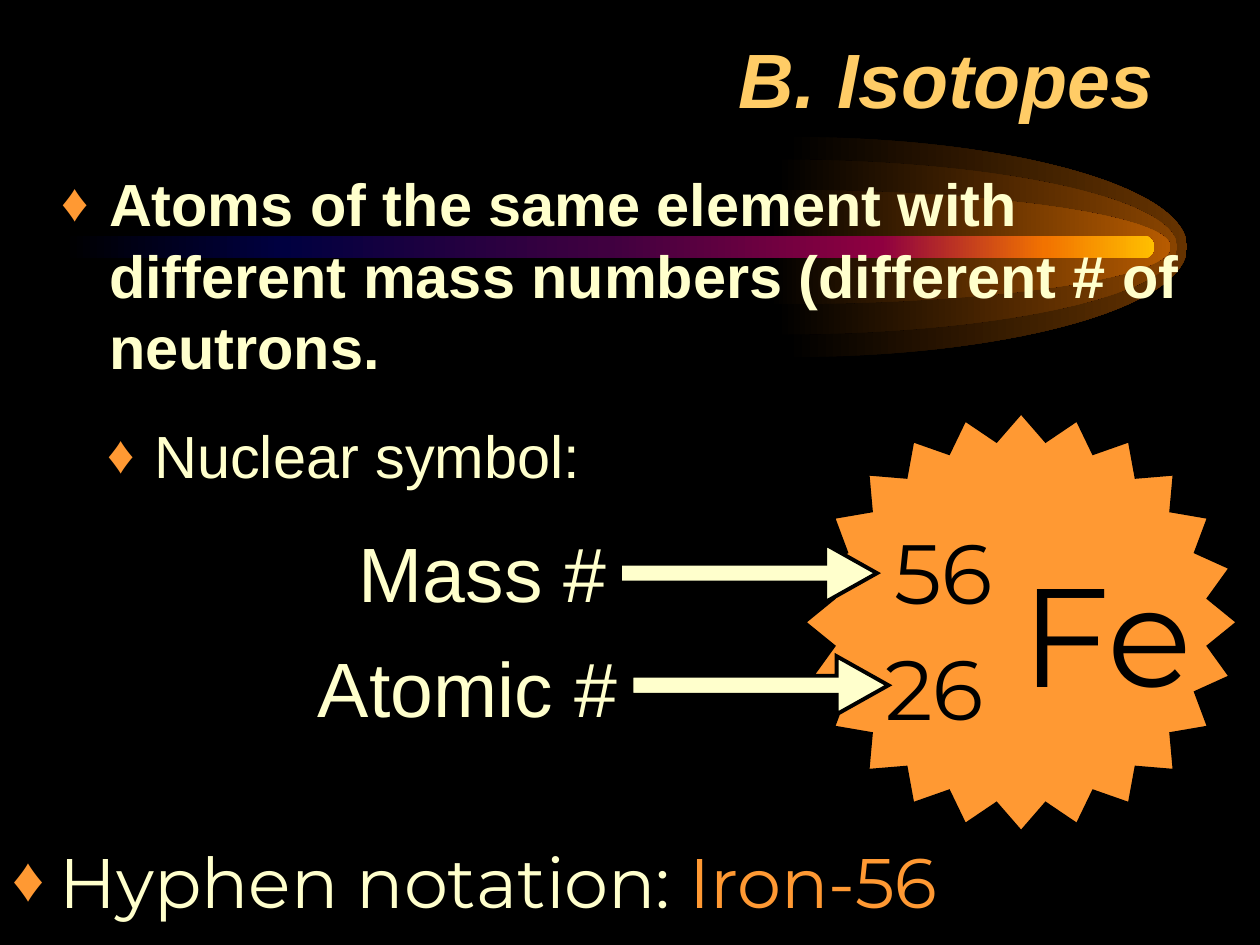
"""Build the slide on isotopes with python-pptx."""
from lxml.etree import SubElement
from pptx import Presentation
from pptx.dml.color import RGBColor
from pptx.enum.shapes import MSO_SHAPE
from pptx.enum.text import MSO_ANCHOR, PP_ALIGN
from pptx.oxml.ns import qn
from pptx.util import Cm, Pt

THEME = {
    "back": "000000", "title": "FFCC66", "text": "FFFFCC", "accent": "FF9933",
    "sans": "Arial", "round": "Montserrat",
    "body_size": 34, "label_size": 44, "note_size": 40, "number_size": 48, "symbol_size": 80,
}
GLOW_WIDTH, GLOW_MIDDLE, CURVE = 8.08, 4.98, 0.55
GLOWS = [(15.85, 4.44, "663300"), (15.65, 3.53, "894400"), (15.52, 2.31, "B75B00")]
COMET = [(0, "000000"), (20, "000040"), (50, "400040"), (75, "8F0040"), (90, "F27300"), (100, "FFBF00")]
TITLE = "B. Isotopes"
DEFINITION = "Atoms of the same element with different mass numbers (different # of neutrons."
SYMBOL_HEADING = "Nuclear symbol:"
NOTATION = [("Hyphen notation: ", THEME["text"]), ("Iron-56", THEME["accent"])]
LABELS = [
    ("Mass #", (6.98, 10.46, 5.51, 2.11), (12.5, 10.97), False),
    ("Atomic #", (6.02, 12.78, 6.68, 2.11), (12.73, 13.23), True),
]
ARROW_SIZE = (5.18, 1.17)
NUMBERS = [
    ("Fe", (20.35, 10.92, 5.05, 3.63), THEME["symbol_size"]),
    ("56", (17.78, 10.36, 3.28, 2.29), THEME["number_size"]),
    ("26", (17.6, 12.7, 3.28, 2.29), THEME["number_size"]),
]


def set_gradient(shape, stops):
    """Fill a shape from left to right through the given colour stops."""
    shape.fill.gradient()
    shape.fill.gradient_angle = 0
    stop_list = shape.fill._xPr.find(qn("a:gradFill")).find(qn("a:gsLst"))
    for old_stop in list(stop_list):
        stop_list.remove(old_stop)
    for percent, color in stops:
        stop = SubElement(stop_list, qn("a:gs"), pos=str(percent * 1000))
        SubElement(stop, qn("a:srgbClr"), val=color)
    shape.line.fill.background()
    shape.shadow.inherit = False


def add_glow(page, left, height, color):
    """Draw the right half of an ellipse as a fading glow."""
    top, half = GLOW_MIDDLE - height / 2, height / 2
    builder = page.shapes.build_freeform(Cm(left), Cm(top))
    corners = [(GLOW_WIDTH, half), (0, height)]
    builder.add_line_segments([(Cm(left + x), Cm(top + y)) for x, y in corners], close=True)
    shape = builder.convert_to_shape()
    curves = [
        [(GLOW_WIDTH * CURVE, 0), (GLOW_WIDTH, half * (1 - CURVE)), corners[0]],
        [(GLOW_WIDTH, half * (1 + CURVE)), (GLOW_WIDTH * CURVE, height), corners[1]],
    ]
    for segment, points in zip(list(shape._element.iter(qn("a:lnTo"))), curves):
        segment.remove(segment[0])
        curve = SubElement(segment.getparent(), qn("a:cubicBezTo"))
        for x, y in points:
            SubElement(curve, qn("a:pt"), x=str(Cm(x)), y=str(Cm(y)))
        segment.getparent().replace(segment, curve)
    set_gradient(shape, [(0, THEME["back"]), (100, color)])


def add_preset(page, kind, place, adjustments, color=None, outline=1):
    """Draw a preset shape with an outline and an optional solid fill."""
    shape = page.shapes.add_shape(kind, *map(Cm, place))
    for index, value in enumerate(adjustments):
        shape.adjustments[index] = value
    shape.shadow.inherit = False
    if color:
        shape.fill.solid()
        shape.fill.fore_color.rgb = RGBColor.from_string(color)
        shape.line.color.rgb = RGBColor.from_string(THEME["back"])
        shape.line.width = Pt(outline)
        SubElement(shape._element.spPr.find(qn("a:ln")), qn("a:miter"), lim="800000")
    return shape


def add_bullet(para):
    """Give a paragraph a hanging diamond bullet."""
    properties = para._p.get_or_add_pPr()
    properties.set("marL", str(Cm(0.95)))
    properties.set("indent", str(-Cm(0.95)))
    bullet_color = SubElement(properties, qn("a:buClr"))
    SubElement(bullet_color, qn("a:srgbClr"), val=THEME["accent"])
    SubElement(properties, qn("a:buSzPct"), val="90000")
    SubElement(properties, qn("a:buFont"), typeface=THEME["sans"])
    SubElement(properties, qn("a:buChar"), char="♦")


def add_text(page, text, place, size=THEME["body_size"], font=THEME["sans"], color=THEME["text"],
             bold=False, italic=False, align=PP_ALIGN.LEFT, anchor=MSO_ANCHOR.TOP,
             wrap=True, bullet=False):
    """Add a text box holding one string or a list of (string, colour) spans."""
    box = page.shapes.add_textbox(*map(Cm, place))
    frame = box.text_frame
    frame.word_wrap = wrap
    frame.vertical_anchor = anchor
    para = frame.paragraphs[0]
    para.alignment = align
    if bullet:
        add_bullet(para)
    for words, span_color in [(text, color)] if isinstance(text, str) else text:
        span = para.add_run()
        span.text = words
        span.font.name = font
        span.font.size = Pt(size)
        span.font.bold = bold
        span.font.italic = italic
        span.font.color.rgb = RGBColor.from_string(span_color)
    return box


def main():
    """Assemble the slide and save the deck."""
    deck = Presentation()
    deck.slide_width, deck.slide_height = Cm(25.4), Cm(19.05)
    page = deck.slides.add_slide(deck.slide_layouts[6])
    page.background.fill.solid()
    page.background.fill.fore_color.rgb = RGBColor.from_string(THEME["back"])

    for glow in GLOWS:
        add_glow(page, *glow)
    comet = add_preset(page, MSO_SHAPE.ROUNDED_RECTANGLE, (1.27, 4.75, 22, 0.46), [0.5])
    set_gradient(comet, COMET)

    add_text(page, TITLE, (1.93, 0.5, 21.59, 2.13), size=THEME["label_size"], color=THEME["title"],
             bold=True, italic=True, align=PP_ALIGN.RIGHT, anchor=MSO_ANCHOR.BOTTOM)
    add_text(page, DEFINITION, (1, 3.25, 23.16, 6.53), bold=True, bullet=True)
    add_preset(page, MSO_SHAPE.STAR_24_POINT, (16.24, 8.34, 8.69, 8.41), [0.436], THEME["accent"])
    for text, place, arrow_corner, wrap in LABELS:
        add_text(page, text, place, size=THEME["label_size"], align=PP_ALIGN.RIGHT, wrap=wrap)
        add_preset(page, MSO_SHAPE.RIGHT_ARROW, arrow_corner + ARROW_SIZE, [0.328, 0.891],
                   THEME["text"], outline=2.25)
    add_text(page, SYMBOL_HEADING, (1.91, 8.33, 11.66, 2.36), bullet=True)
    add_text(page, NOTATION, (0, 16.77, 21.23, 1.75), size=THEME["note_size"],
             font=THEME["round"], bullet=True)
    for text, place, size in NUMBERS:
        add_text(page, text, place, size=size, font=THEME["round"], color=THEME["back"])

    deck.save("out.pptx")


if __name__ == "__main__":
    main()
